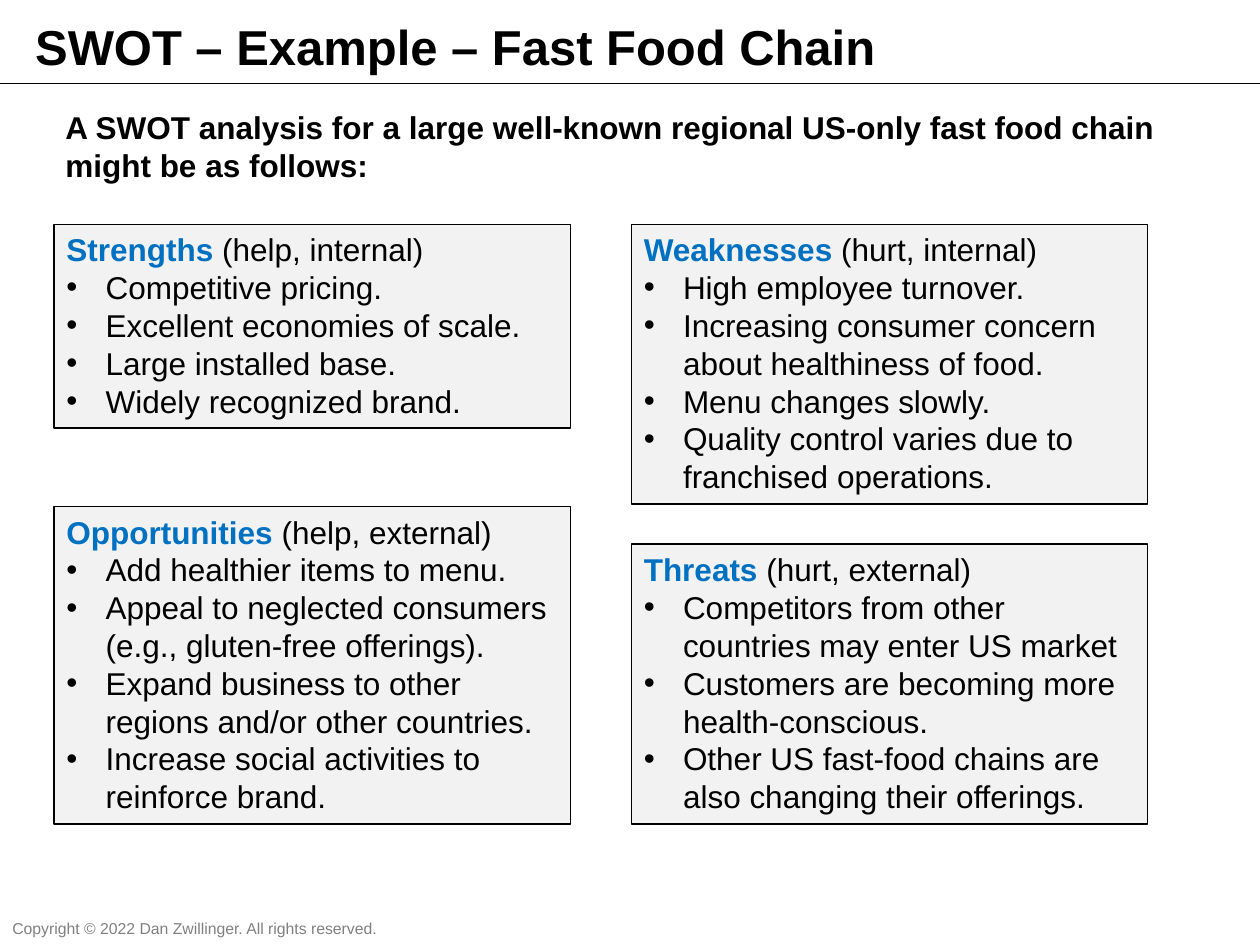
from dataclasses import dataclass

from lxml import etree
from pptx import Presentation
from pptx.dml.color import RGBColor as Rgb
from pptx.enum import shapes, text
from pptx.oxml import ns
from pptx.util import Cm, Pt


@dataclass(frozen=True)
class Theme:
    """Colours, font and type sizes of the slide."""
    font: str = "Arial"
    ink: str = "000000"
    head: str = "0070C0"
    fill: str = "F2F2F2"
    grey: str = "808080"
    title: int = 28
    body: int = 18
    foot: int = 9
    line: float = 0.75


THEME = Theme()
LEFT, RIGHT = 1.09, 12.73
TOP, BASE = 4.52, 16.61
WIDTH, INDENT = 10.41, 0.79

SWOT = [
    (LEFT, TOP, 4.11, "Strengths ", "(help, internal)", [
        "Competitive pricing.",
        "Excellent economies of scale.",
        "Large installed base.",
        "Widely recognized brand."]),
    (LEFT, BASE - 6.4, 6.4, "Opportunities ", "(help, external)", [
        "Add healthier items to menu.",
        "Appeal to neglected consumers (e.g., gluten-free offerings).",
        "Expand business to other regions and/or other countries.",
        "Increase social activities to reinforce brand."]),
    (RIGHT, TOP, 5.64, "Weaknesses ", "(hurt, internal)", [
        "High employee turnover.",
        "Increasing consumer concern about healthiness of food.",
        "Menu changes slowly.",
        "Quality control varies due to franchised operations."]),
    (RIGHT, BASE - 5.64, 5.64, "Threats ", "(hurt, external)", [
        "Competitors from other countries may enter US market",
        "Customers are becoming more health-conscious.",
        "Other US fast-food chains are also changing their offerings."]),
]


def add_run(para, words, size, color=THEME.ink, bold=False):
    """Add one styled run to a paragraph."""
    run = para.add_run()
    run.text = words
    font = run.font
    font.name, font.size, font.bold = THEME.font, Pt(size), bold
    font.color.rgb = Rgb.from_string(color)


def add_bullet(para):
    """Give a paragraph a round bullet with a hanging indent."""
    props = para._p.get_or_add_pPr()
    props.set("marL", str(Cm(INDENT)))
    props.set("indent", str(-Cm(INDENT)))
    etree.SubElement(props, ns.qn("a:buFont"), typeface=THEME.font)
    etree.SubElement(props, ns.qn("a:buChar"), char="•")


def add_label(slide, area, words, size, color=THEME.ink, bold=True, wrap=True):
    """Add a text box that holds a single run."""
    frame = slide.shapes.add_textbox(*map(Cm, area)).text_frame
    frame.word_wrap = wrap
    frame.auto_size = text.MSO_AUTO_SIZE.SHAPE_TO_FIT_TEXT
    add_run(frame.paragraphs[0], words, size, color, bold)


def add_rule(slide, y, width):
    """Draw the thin line under the title."""
    rule = slide.shapes.add_connector(
        shapes.MSO_CONNECTOR.STRAIGHT, 0, Cm(y), width, Cm(y))
    rule.line.color.rgb = Rgb.from_string(THEME.ink)
    rule.line.width = Pt(THEME.line)
    etree.SubElement(rule._element.spPr, ns.qn("a:effectLst"))


def add_panel(slide, x, y, height, head, note, items):
    """Add one SWOT panel with its heading and bullets."""
    panel = slide.shapes.add_shape(
        shapes.MSO_SHAPE.RECTANGLE, Cm(x), Cm(y), Cm(WIDTH), Cm(height))
    panel.shadow.inherit = False
    panel.fill.solid()
    panel.fill.fore_color.rgb = Rgb.from_string(THEME.fill)
    panel.line.color.rgb = Rgb.from_string(THEME.ink)
    panel.line.width = Pt(THEME.line)
    frame = panel.text_frame
    frame.word_wrap = True
    frame.auto_size = text.MSO_AUTO_SIZE.SHAPE_TO_FIT_TEXT
    frame.vertical_anchor = text.MSO_ANCHOR.TOP
    para = frame.paragraphs[0]
    para.alignment = text.PP_ALIGN.LEFT
    add_run(para, head, THEME.body, THEME.head, True)
    add_run(para, note, THEME.body)
    for item in items:
        para = frame.add_paragraph()
        para.alignment = text.PP_ALIGN.LEFT
        add_bullet(para)
        add_run(para, item, THEME.body)


def main():
    """Build and save the slide."""
    deck = Presentation()
    deck.slide_width, deck.slide_height = Cm(25.4), Cm(19.05)
    slide = deck.slides.add_slide(deck.slide_layouts[6])
    add_rule(slide, 1.69, deck.slide_width)
    add_label(slide, (0.46, 0.2, 19.81, 1.45),
              "SWOT – Example – Fast Food Chain", THEME.title)
    add_label(slide, (0, 18.39, 7.95, 0.64),
              "Copyright © 2022 Dan Zwillinger. All rights reserved.",
              THEME.foot, THEME.grey, bold=False, wrap=False)
    add_label(slide, (1.07, 2.06, 22.99, 1.8),
              "A SWOT analysis for a large well-known regional US-only "
              "fast food chain might be as follows:", THEME.body)
    for panel in SWOT:
        add_panel(slide, *panel)
    deck.save("out.pptx")


if __name__ == "__main__":
    main()
